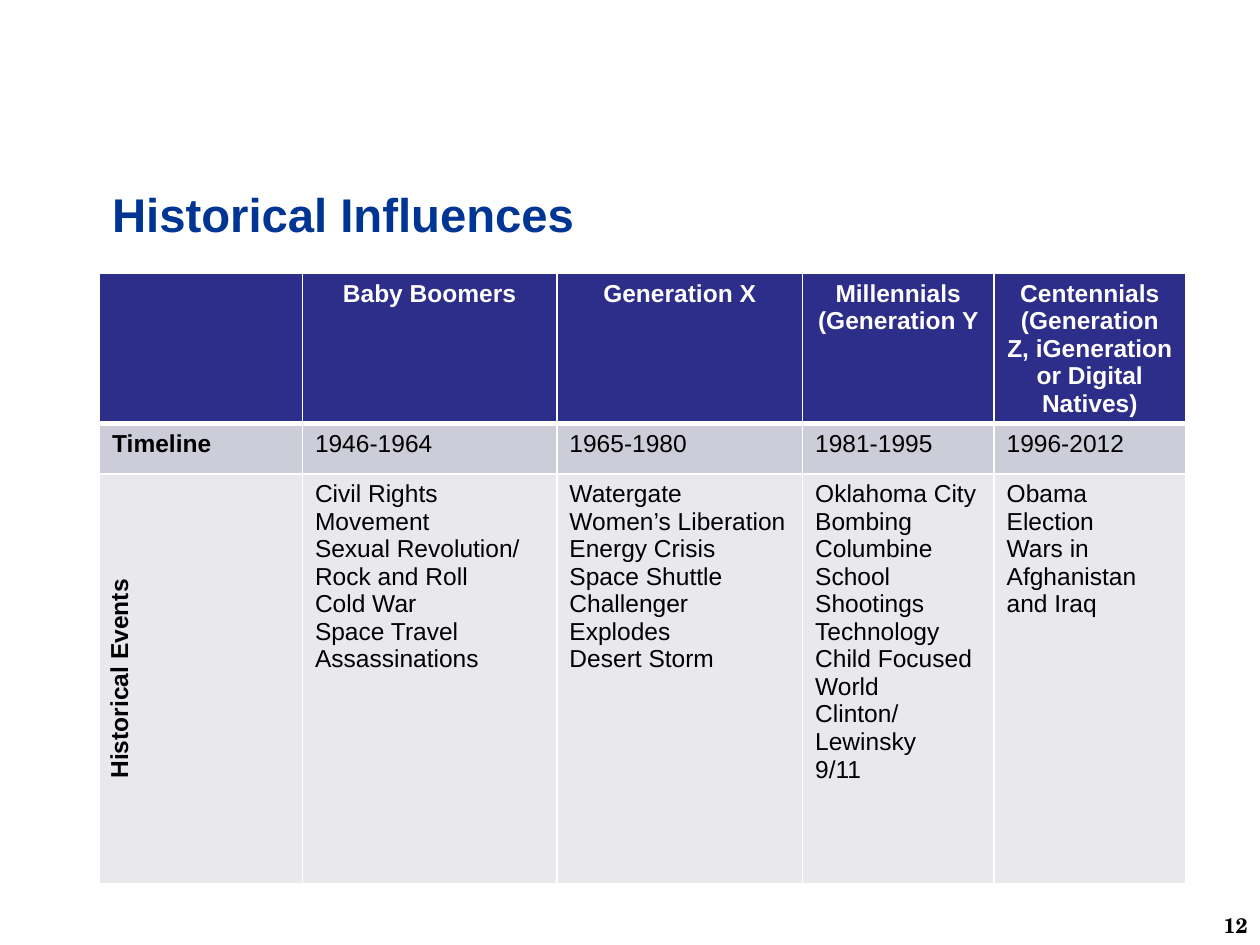
from dataclasses import dataclass

from lxml import etree
from pptx import Presentation
from pptx.dml.color import RGBColor
from pptx.enum import text
from pptx.oxml import ns
from pptx.util import Inches, Pt


@dataclass(frozen=True)
class Theme:
    font: str = "Arial"
    number_font: str = "TeX Gyre Schola"
    title: str = "003594"
    header: str = "2D2D8A"
    band: str = "CDCDDA"
    body: str = "E8E8ED"
    white: str = "FFFFFF"
    black: str = "000000"
    title_size: float = 27
    cell_size: float = 14
    number_size: float = 12
    line: float = 1
    header_line: float = 3


@dataclass(frozen=True)
class Row:
    height: float
    fill: str
    color: str
    cells: tuple[str, ...]


THEME = Theme()
COLUMN_WIDTHS = (1.61, 2.02, 1.95, 1.52, 1.52)
ROWS = (
    Row(1.19, THEME.header, THEME.white, (
        "",
        "Baby Boomers",
        "Generation X",
        "Millennials\n(Generation Y",
        "Centennials\n(Generation Z, iGeneration or Digital Natives)",
    )),
    Row(0.4, THEME.band, THEME.black, (
        "Timeline", "1946-1964", "1965-1980", "1981-1995", "1996-2012",
    )),
    Row(3.25, THEME.body, THEME.black, (
        "Historical Events",
        "Civil Rights Movement\nSexual Revolution/\nRock and Roll\nCold War\n"
        "Space Travel\nAssassinations",
        "Watergate\nWomen’s Liberation\nEnergy Crisis\n"
        "Space Shuttle Challenger Explodes\nDesert Storm",
        "Oklahoma City Bombing\nColumbine School Shootings\nTechnology\n"
        "Child Focused World\nClinton/\nLewinsky\n9/11",
        "Obama Election\nWars in Afghanistan and Iraq",
    )),
)


def style(paragraph, font: str, size: float, color: str, bold: bool, align) -> None:
    paragraph.alignment = align
    paragraph.font.name = font
    paragraph.font.size = Pt(size)
    paragraph.font.bold = bold
    paragraph.font.color.rgb = RGBColor.from_string(color)


def set_borders(cell, top: float, bottom: float) -> None:
    properties = cell._tc.get_or_add_tcPr()
    widths = {"lnL": THEME.line, "lnR": THEME.line, "lnT": top, "lnB": bottom}
    for index, (side, width) in enumerate(widths.items()):
        line = etree.Element(ns.qn(f"a:{side}"), w=str(Pt(width)))
        fill = etree.SubElement(line, ns.qn("a:solidFill"))
        etree.SubElement(fill, ns.qn("a:srgbClr"), val=THEME.white)
        properties.insert(index, line)


def add_title(page, words: str) -> None:
    box = page.shapes.title
    box.left, box.top = Inches(0.79), Inches(1.37)
    box.width, box.height = Inches(9), Inches(0.65)
    frame = box.text_frame
    frame.text = words
    frame.auto_size = text.MSO_AUTO_SIZE.NONE
    frame.vertical_anchor = text.MSO_ANCHOR.MIDDLE
    style(frame.paragraphs[0], THEME.font, THEME.title_size, THEME.title, True,
          text.PP_ALIGN.LEFT)


def add_generation_table(page) -> None:
    table = page.shapes.add_table(
        len(ROWS), len(COLUMN_WIDTHS), Inches(0.79), Inches(2.17),
        Inches(sum(COLUMN_WIDTHS)), Inches(sum(row.height for row in ROWS)),
    ).table
    for column, width in zip(table.columns, COLUMN_WIDTHS):
        column.width = Inches(width)
    last = len(ROWS) - 1
    for row_index, row in enumerate(ROWS):
        table.rows[row_index].height = Inches(row.height)
        top = THEME.header_line if row_index == 1 else THEME.line
        bottom = THEME.header_line if row_index == 0 else THEME.line
        for column_index, words in enumerate(row.cells):
            cell = table.cell(row_index, column_index)
            cell.text = words
            cell.fill.solid()
            cell.fill.fore_color.rgb = RGBColor.from_string(row.fill)
            set_borders(cell, top, bottom)
            vertical = row_index == last and column_index == 0
            if vertical:
                cell._tc.get_or_add_tcPr().set("vert", "vert270")
            centred = row_index == 0 or vertical
            align = text.PP_ALIGN.CENTER if centred else text.PP_ALIGN.LEFT
            bold = row_index == 0 or column_index == 0
            for paragraph in cell.text_frame.paragraphs:
                style(paragraph, THEME.font, THEME.cell_size, row.color, bold, align)


def add_page_number(page, number: str) -> None:
    box = page.shapes.add_textbox(Inches(8.89), Inches(7.24), Inches(1.11), Inches(0.21))
    frame = box.text_frame
    frame.word_wrap = True
    frame.vertical_anchor = text.MSO_ANCHOR.MIDDLE
    frame.margin_top = frame.margin_bottom = 0
    frame.text = number
    style(frame.paragraphs[0], THEME.number_font, THEME.number_size, THEME.black, True,
          text.PP_ALIGN.RIGHT)


def main() -> None:
    deck = Presentation()
    deck.slide_width, deck.slide_height = Inches(10), Inches(7.5)
    page = deck.slides.add_slide(deck.slide_layouts[5])
    add_title(page, "Historical Influences")
    add_generation_table(page)
    add_page_number(page, "12")
    deck.save("out.pptx")


if __name__ == "__main__":
    main()
